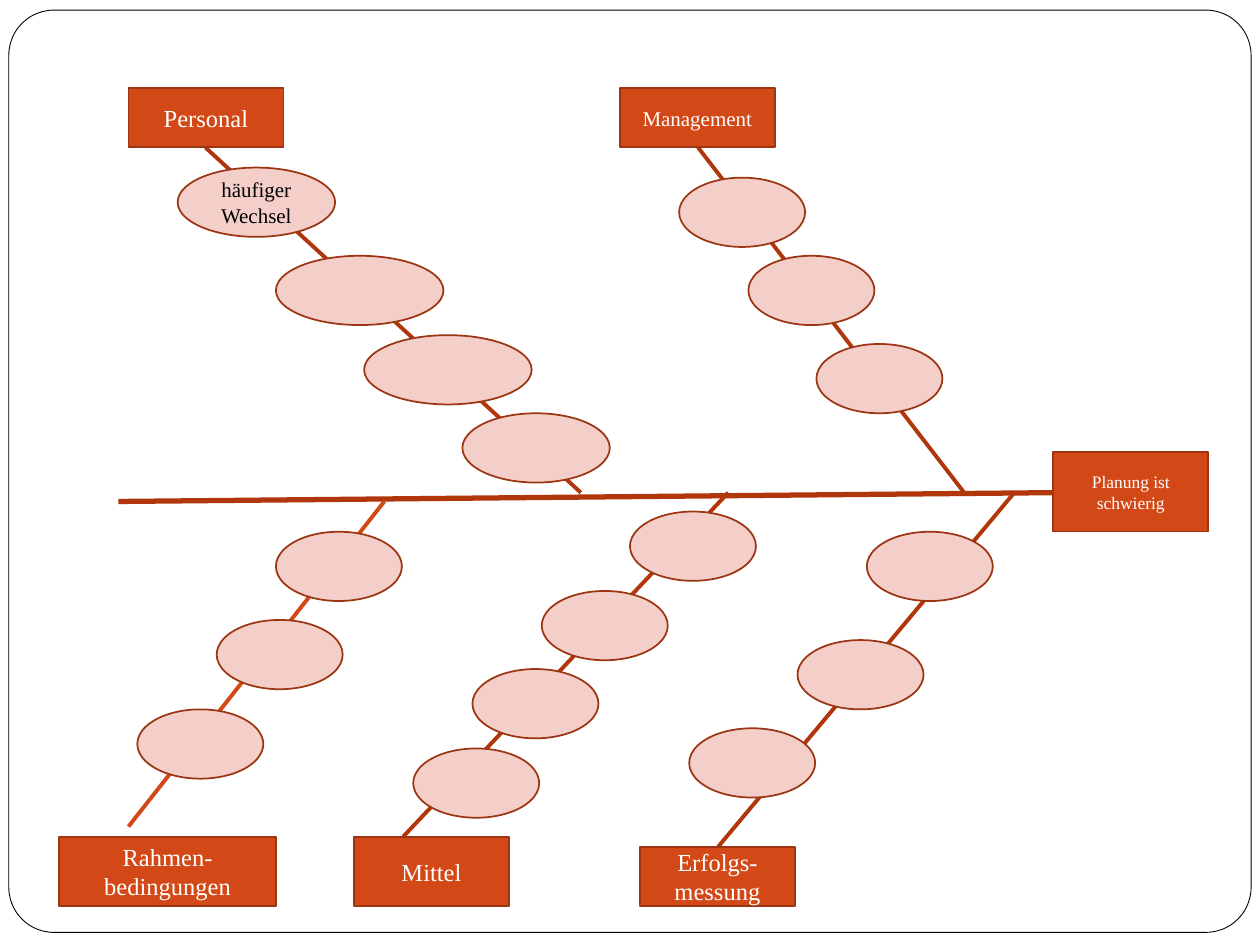
from dataclasses import dataclass

from lxml.etree import SubElement
from pptx import Presentation
from pptx.dml.color import RGBColor
from pptx.enum.shapes import MSO_CONNECTOR as Connector, MSO_SHAPE as Shape
from pptx.enum.text import MSO_ANCHOR as Anchor, PP_ALIGN as Align
from pptx.oxml.ns import qn
from pptx.util import Pt

PX = 9144  # EMU per px, 100 px to the inch


@dataclass(frozen=True)
class Theme:
    font: str = "Times New Roman"
    paper: str = "FFFFFF"
    ink: str = "000000"
    box: str = "D34817"
    edge: str = "9C3511"
    bone: str = "B1360B"
    cause: str = "F4CEC9"
    large: int = 14
    medium: int = 12
    small: int = 10
    frame_width: float = 0.5
    edge_width: float = 1
    bone_width: float = 2.25
    spine_width: float = 3


THEME = Theme()
SLIDE_SIZE = (1000, 750)
FRAME = (7, 8, 986, 732)
FRAME_ROUNDING = 0.049
SPINE = ((94, 398), (836, 391))
CAUSE_SIZE = (100, 55)

EFFECT = {"text": "Planung ist schwierig", "box": (836, 359, 123, 63), "size": THEME.small}

# Each cause: left, top, then width and text where they differ from the usual
BRANCHES = [
    {"text": "Personal", "box": (102, 70, 123, 47), "size": THEME.large,
     "bone": ((461, 391), (163, 117)), "color": THEME.bone,
     "causes": [(141, 133, 125, "häufiger Wechsel"), (219, 203, 133),
                (289, 266, 133), (367, 328, 117)]},
    {"text": "Management", "box": (492, 70, 123, 47), "size": THEME.medium,
     "bone": ((554, 117), (766, 392)), "color": THEME.bone,
     "causes": [(539, 141), (594, 203), (648, 273)]},
    {"text": "Rahmen-\nbedingungen", "box": (47, 664, 172, 55), "size": THEME.large,
     "bone": ((305, 398), (102, 656)), "color": THEME.box,
     "causes": [(219, 422), (172, 492), (109, 563)]},
    {"text": "Mittel", "box": (281, 664, 123, 55), "size": THEME.large,
     "bone": ((578, 391), (320, 664)), "color": THEME.bone,
     "causes": [(500, 406), (430, 469), (375, 531), (328, 594)]},
    {"text": "Erfolgs-\nmessung", "box": (508, 672, 123, 47), "size": THEME.large,
     "bone": ((805, 391), (570, 672)), "color": THEME.bone,
     "causes": [(688, 422), (633, 508), (547, 578)]},
]


def rgb(color):
    return RGBColor.from_string(color)


def emu(*lengths):
    return [length * PX for length in lengths]


def add_outlined(slide, kind, box, fill, edge=THEME.edge, width=THEME.edge_width):
    shape = slide.shapes.add_shape(kind, *emu(*box))
    shape.shadow.inherit = False
    shape.fill.solid()
    shape.fill.fore_color.rgb = rgb(fill)
    shape.line.color.rgb = rgb(edge)
    shape.line.width = Pt(width)
    return shape


def add_line(slide, ends, color, width):
    start, end = ends
    line = slide.shapes.add_connector(Connector.STRAIGHT, *emu(*start, *end))
    line.line.color.rgb = rgb(color)
    line.line.width = Pt(width)
    SubElement(line._element.spPr, qn("a:effectLst"))


def write(shape, text, *, size, color):
    """Put centred text into a shape, one paragraph per line."""
    frame = shape.text_frame
    frame.word_wrap = True
    frame.vertical_anchor = Anchor.MIDDLE
    frame.text = text
    for paragraph in frame.paragraphs:
        paragraph.alignment = Align.CENTER
        font = paragraph.runs[0].font
        font.name = THEME.font
        font.size = Pt(size)
        font.color.rgb = rgb(color)


def add_label(slide, label):
    box = add_outlined(slide, Shape.RECTANGLE, label["box"], THEME.box)
    write(box, label["text"], size=label["size"], color=THEME.paper)


def add_cause(slide, left, top, width=CAUSE_SIZE[0], text=""):
    oval = add_outlined(slide, Shape.OVAL, (left, top, width, CAUSE_SIZE[1]), THEME.cause)
    if text:
        write(oval, text, size=THEME.medium, color=THEME.ink)


def main():
    deck = Presentation()
    deck.slide_width, deck.slide_height = emu(*SLIDE_SIZE)
    slide = deck.slides.add_slide(deck.slide_layouts[6])

    frame = add_outlined(slide, Shape.ROUNDED_RECTANGLE, FRAME, THEME.paper,
                         THEME.ink, THEME.frame_width)
    frame.adjustments[0] = FRAME_ROUNDING

    add_line(slide, SPINE, THEME.bone, THEME.spine_width)
    add_label(slide, EFFECT)
    for branch in BRANCHES:
        add_line(slide, branch["bone"], branch["color"], THEME.bone_width)
        add_label(slide, branch)
        for cause in branch["causes"]:
            add_cause(slide, *cause)

    deck.save("out.pptx")


if __name__ == "__main__":
    main()
